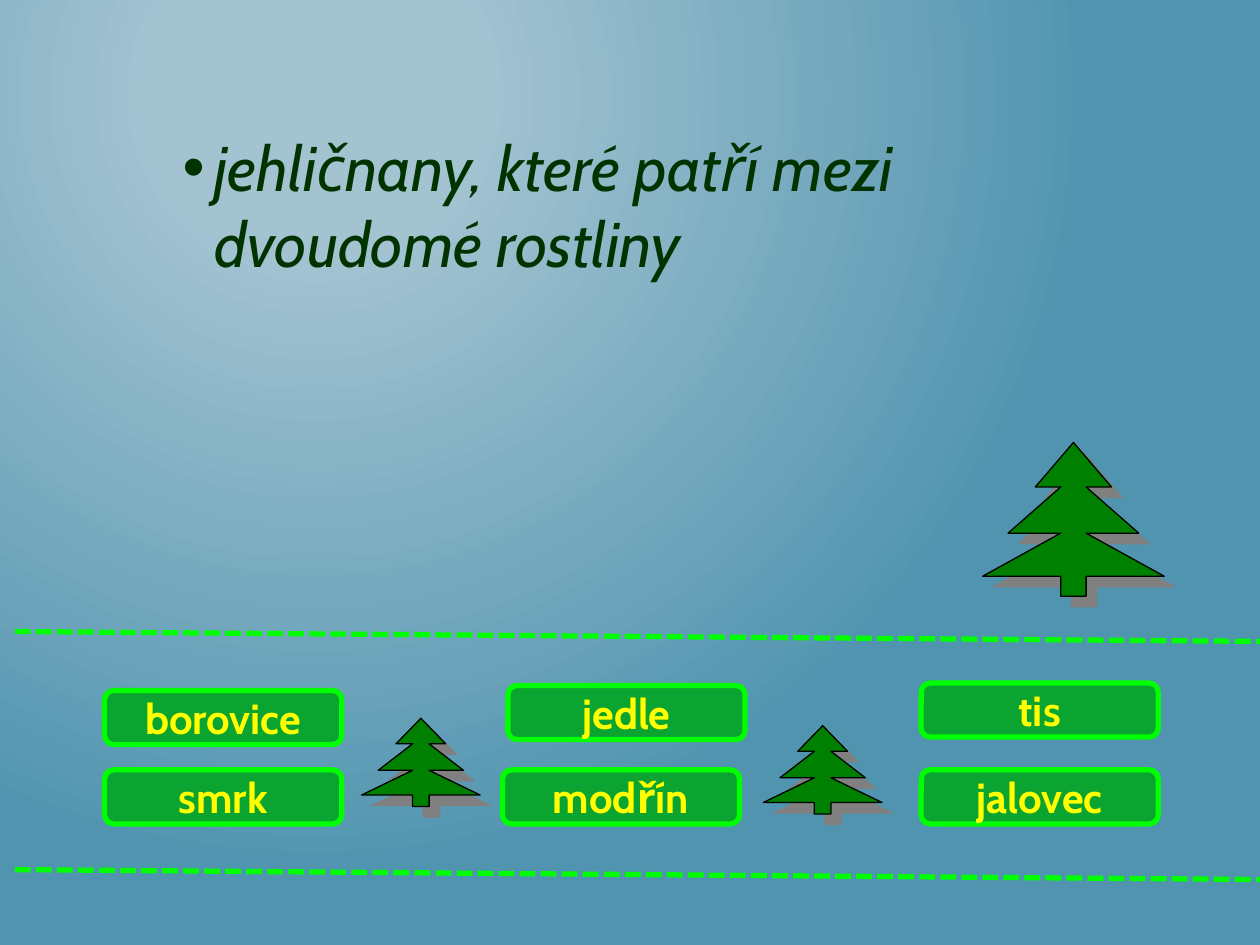
from lxml import etree
from pptx import Presentation
from pptx.dml.color import RGBColor
from pptx.enum.dml import MSO_LINE
from pptx.enum.shapes import MSO_CONNECTOR, MSO_SHAPE
from pptx.enum.text import MSO_ANCHOR, MSO_AUTO_SIZE, PP_ALIGN
from pptx.oxml import parse_xml
from pptx.oxml.ns import qn
from pptx.util import Cm, Pt

ROUNDED = MSO_SHAPE.ROUNDED_RECTANGLE
STRAIGHT = MSO_CONNECTOR.STRAIGHT
SYS_DASH = MSO_LINE.SQUARE_DOT
MIDDLE = MSO_ANCHOR.MIDDLE
NO_FIT = MSO_AUTO_SIZE.NONE
CENTER = PP_ALIGN.CENTER
LEFT = PP_ALIGN.LEFT

FONT = "Cabin"
LIME = "00FF00"
NS = 'xmlns:a="http://schemas.openxmlformats.org/drawingml/2006/main"'

TREE_HALF = [(0.5, 0), (0.71, 0.29), (0.57, 0.29), (0.86, 0.59), (0.57, 0.59),
             (1, 0.87), (0.57, 0.87), (0.57, 1)]
TREES = [(19.81, 8.92, 3.66, 3.1), (7.29, 14.48, 2.39, 1.78),
         (15.39, 14.63, 2.39, 1.78)]
ANSWERS = [("borovice", 2.11, 13.92), ("smrk", 2.11, 15.52),
           ("jedle", 10.24, 13.82), ("modřín", 10.13, 15.52),
           ("tis", 18.57, 13.77), ("jalovec", 18.57, 15.52)]


def rgb(value):
    return RGBColor.from_string(value)


def paint(sp, fill, line, width):
    sp.shadow.inherit = False
    sp.fill.solid()
    sp.fill.fore_color.rgb = rgb(fill)
    sp.line.color.rgb = rgb(line)
    sp.line.width = Pt(width)


def style_text(p, size, color, bold=False, italic=False):
    for r in p.runs:
        r.font.name = FONT
        r.font.size = Pt(size)
        r.font.bold = bold
        r.font.italic = italic
        r.font.color.rgb = rgb(color)


def set_background(s):
    s.background.fill.solid()
    bg_pr = s.background._cSld.find(qn("p:bg")).find(qn("p:bgPr"))
    grad = parse_xml(
        f'<a:gradFill {NS} rotWithShape="1"><a:gsLst>'
        '<a:gs pos="20000"><a:srgbClr val="A3C3D1"/></a:gs>'
        '<a:gs pos="100000"><a:srgbClr val="5194AF"/></a:gs></a:gsLst>'
        '<a:path path="circle"><a:fillToRect l="50000" t="20000" '
        'r="100000" b="100000"/></a:path></a:gradFill>')
    bg_pr.replace(bg_pr.find(qn("a:solidFill")), grad)


def add_question(s, text):
    sp = s.placeholders[1]
    sp.left, sp.top, sp.width, sp.height = Cm(0.89), Cm(0.66), Cm(19.2), Cm(9.4)
    tf = sp.text_frame
    tf.word_wrap = True
    tf.auto_size = NO_FIT
    tf.margin_top = Cm(1.93)
    tf.text = text
    p = tf.paragraphs[0]
    p.level = 2
    p.alignment = LEFT
    p.space_before = Pt(0)
    style_text(p, 36, "003300", italic=True)
    p_pr = p._p.get_or_add_pPr()
    p_pr.set("marL", str(Cm(3.18)))
    p_pr.set("indent", str(-Cm(0.64)))
    etree.SubElement(p_pr, qn("a:buChar"), char="•")


def add_answer(s, text, x, y):
    sp = s.shapes.add_shape(ROUNDED, Cm(x), Cm(y), Cm(4.78), Cm(1.09))
    paint(sp, "0CA430", LIME, 3)
    tf = sp.text_frame
    tf.word_wrap = True
    tf.vertical_anchor = MIDDLE
    tf.text = text
    p = tf.paragraphs[0]
    p.alignment = CENTER
    style_text(p, 24, "FFFF00", bold=True)


def add_tree(s, x, y, w, h):
    mirrored = [(1 - u, v) for u, v in reversed(TREE_HALF[1:])]
    points = [(Cm(x + u * w), Cm(y + v * h)) for u, v in TREE_HALF + mirrored]
    builder = s.shapes.build_freeform(*points[0])
    builder.add_line_segments(points[1:], close=True)
    sp = builder.convert_to_shape()
    paint(sp, "008000", "000000", 0.75)
    effects = sp._element.spPr.find(qn("a:effectLst"))
    effects.append(parse_xml(
        f'<a:outerShdw {NS} dist="{Pt(8.5)}" dir="2700000" algn="ctr" '
        'rotWithShape="0"><a:srgbClr val="808080"/></a:outerShdw>'))


def add_dashed_line(s, y):
    line = s.shapes.add_connector(STRAIGHT, Cm(0.3), Cm(y), Cm(25.4), Cm(y + 0.2))
    line.line.color.rgb = rgb(LIME)
    line.line.width = Pt(3)
    line.line.dash_style = SYS_DASH
    etree.SubElement(line._element.spPr, qn("a:effectLst"))


def main():
    prs = Presentation()
    prs.slide_width, prs.slide_height = Cm(25.4), Cm(19.05)
    s = prs.slides.add_slide(prs.slide_layouts[1])
    title = s.shapes.title._element
    title.getparent().remove(title)
    set_background(s)
    add_question(s, "jehličnany, které patří mezi dvoudomé rostliny")
    for answer in ANSWERS:
        add_answer(s, *answer)
    for y in (12.73, 17.53):
        add_dashed_line(s, y)
    for tree in TREES:
        add_tree(s, *tree)
    prs.save("out.pptx")


if __name__ == "__main__":
    main()
